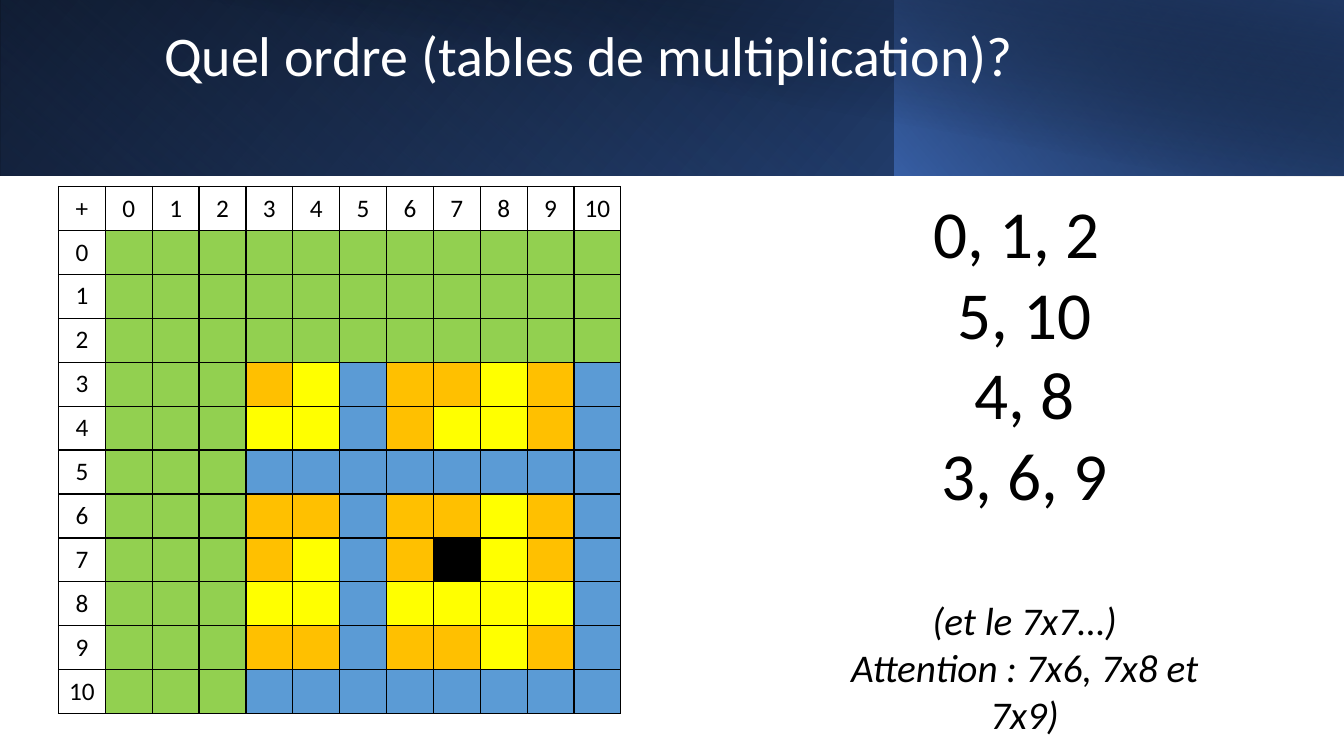
import dataclasses

import pptx
import pptx.dml.color
import pptx.enum.shapes
import pptx.enum.text
import pptx.oxml
import pptx.oxml.ns
import pptx.util

Align = pptx.enum.text.PP_ALIGN
Anchor = pptx.enum.text.MSO_ANCHOR
AutoSize = pptx.enum.text.MSO_AUTO_SIZE
Pt = pptx.util.Pt


@dataclasses.dataclass(frozen=True)
class Theme:
    font: str = "Calibri"
    title_size: int = 40
    order_size: int = 48
    remark_size: int = 28
    cell_size: int = 18
    white: str = "FFFFFF"
    black: str = "000000"
    navy: str = "203864"
    royal: str = "2F5597"
    blue: str = "4472C4"
    easy: str = "92D050"
    fives: str = "5B9BD5"
    doubles: str = "FFFF00"
    threes: str = "FFC000"


def rgb(value):
    return pptx.dml.color.RGBColor.from_string(value)


def apply(target, values):
    for name, value in values.items():
        setattr(target, name, value)


class Page:
    """One slide on a grid of square units, ten to the inch."""

    unit = pptx.util.Inches(0.1)
    columns, rows = 133.33, 75

    def __init__(self, deck, theme):
        self.theme = theme
        deck.slide_width = self.length(self.columns)
        deck.slide_height = self.length(self.rows)
        self.slide = deck.slides.add_slide(deck.slide_layouts[6])

    def length(self, units):
        return round(units * self.unit)

    def area(self, *units):
        return [self.length(value) for value in units]

    def gradient(self, area, angle, stops, flip=True, rotation=0):
        """Stops are (position, colour, opacity); the angle runs clockwise."""
        shape = self.slide.shapes.add_shape(
            pptx.enum.shapes.MSO_SHAPE.RECTANGLE, *self.area(*area))
        shape.shadow.inherit = False
        shape.line.fill.background()
        shape.rotation = rotation
        if flip:
            shape._element.spPr.xfrm.set("flipH", "1")
        shape.fill.gradient()
        shape.fill.gradient_angle = 360 - angle
        for stop, (position, color, opacity) in zip(shape.fill.gradient_stops, stops):
            stop.position = position / 100
            stop.color.rgb = rgb(color)
            if opacity < 100:
                color_node = stop._gs[0]
                alpha = color_node.makeelement(pptx.oxml.ns.qn("a:alpha"), {})
                alpha.set("val", str(opacity * 1000))
                color_node.append(alpha)

    def span(self, para, text, size, color, align=Align.LEFT, italic=False, **spacing):
        span = para.add_run()
        span.text = text
        apply(span.font, {"name": self.theme.font, "size": Pt(size), "italic": italic})
        span.font.color.rgb = rgb(color)
        apply(para, {"alignment": align, **spacing})

    def text(self, area, lines, **frame_values):
        box = self.slide.shapes.add_textbox(*self.area(*area))
        frame = box.text_frame
        apply(frame, {"word_wrap": True, **frame_values})
        for index, line in enumerate(lines):
            para = frame.add_paragraph() if index else frame.paragraphs[0]
            self.span(para, **line)

    def border(self, cell):
        properties = cell._tc.get_or_add_tcPr()
        for index, side in enumerate(("lnL", "lnR", "lnT", "lnB")):
            properties.insert(index, pptx.oxml.parse_xml(
                f'<a:{side} {pptx.oxml.ns.nsdecls("a")} w="12700"><a:solidFill>'
                f'<a:srgbClr val="{self.theme.black}"/></a:solidFill></a:{side}>'))

    def times_table(self, area, labels, color_of):
        count = len(labels)
        table = self.slide.shapes.add_table(count, count, *self.area(*area)).table
        apply(table, {"first_row": False, "horz_banding": False})
        for column in table.columns:
            column.width = self.length(area[2] / count)
        for row in table.rows:
            row.height = self.length(area[3] / count)
        for row, left in enumerate(labels):
            for column, top in enumerate(labels):
                cell = table.cell(row, column)
                cell.vertical_anchor = Anchor.MIDDLE
                cell.fill.solid()
                heading = row == 0 or column == 0
                color = self.theme.white if heading else color_of(left, top)
                cell.fill.fore_color.rgb = rgb(color)
                self.border(cell)
                if heading:
                    self.span(cell.text_frame.paragraphs[0],
                              str(left if column == 0 else top),
                              self.theme.cell_size, self.theme.black, Align.CENTER)


def product_color(theme, left, top):
    """Colour of a product by the stage at which it is learnt."""
    pair = {left, top}
    if min(pair) <= 2:
        return theme.easy
    if pair & {5, 10}:
        return theme.fives
    if pair == {7}:
        return theme.black
    if 8 in pair or (4 in pair and not pair & {6, 9}):
        return theme.doubles
    return theme.threes


def main():
    theme = Theme()
    deck = pptx.Presentation()
    page = Page(deck, theme)

    band = 17.4
    page.gradient((0, 0, page.columns, band), 140,
                  [(0, theme.black, 100), (100, theme.royal, 100)])
    page.gradient((0, 0, 88.8, band), 230,
                  [(20, theme.blue, 0), (100, theme.navy, 55)], rotation=180)
    page.gradient((88.7, 0, 44.6, band), 220,
                  [(0, theme.blue, 66), (100, theme.black, 30)])
    page.gradient((5, 0, 128.3, 17.5), 280,
                  [(50, theme.black, 0), (99, theme.navy, 52)], flip=False)

    page.text((15.3, 2.8, 114.4, 12.1),
              [{"text": "Quel ordre (tables de multiplication)?", "size": theme.title_size,
                "color": theme.white, "line_spacing": 0.9}],
              vertical_anchor=Anchor.TOP, margin_top=0, margin_bottom=0)

    page.times_table((5.8, 18.5, 55.8, 52.3), ["+", *range(11)],
                     lambda left, top: product_color(theme, left, top))

    order = {"size": theme.order_size, "color": theme.black, "align": Align.CENTER}
    remark = {**order, "size": theme.remark_size, "italic": True}
    lines = [{"text": text, **order} for text in ("0, 1, 2 ", "5, 10", "4, 8", "3, 6, 9")]
    lines.append({"text": "(et le 7x7…)", "space_before": Pt(58.5), **remark})
    lines.append({"text": "Attention : 7x6, 7x8 et 7x9)", **remark})
    page.text((80.8, 18.5, 41.7, 55.5), lines, auto_size=AutoSize.SHAPE_TO_FIT_TEXT)

    deck.save("out.pptx")


if __name__ == "__main__":
    main()
